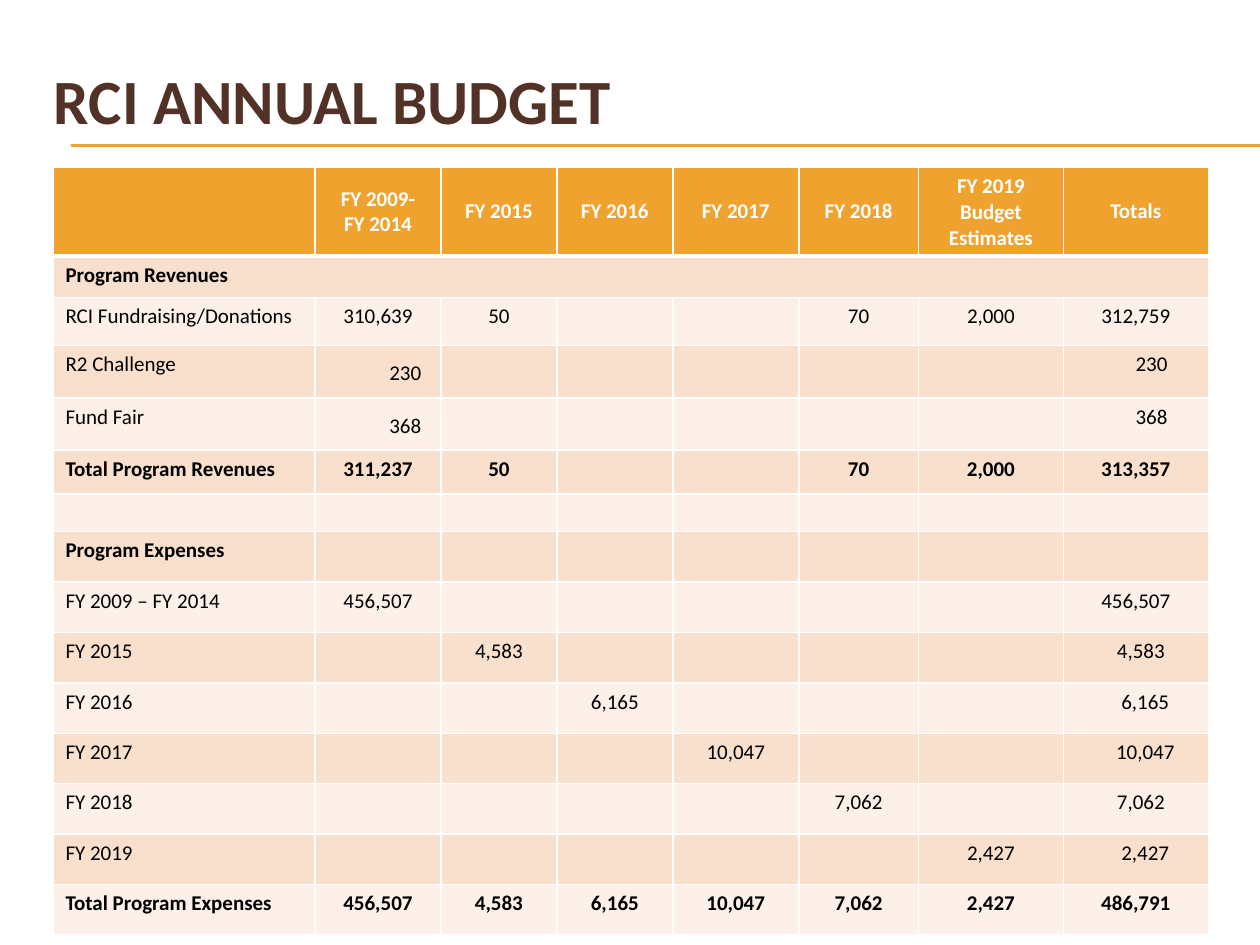
from lxml.etree import SubElement
from pptx import Presentation
from pptx.dml.color import RGBColor
from pptx.enum.shapes import MSO_CONNECTOR as CONN
from pptx.enum.text import MSO_ANCHOR as ANCHOR, PP_ALIGN as ALIGN
from pptx.oxml.ns import qn
from pptx.util import Inches, Pt

ORANGE = RGBColor(0xF0, 0xA2, 0x2E)
BROWN = RGBColor(0x52, 0x32, 0x27)
PEACH = RGBColor(0xF9, 0xE0, 0xCD)
CREAM = RGBColor(0xFC, 0xF0, 0xE8)
WHITE = RGBColor(0xFF, 0xFF, 0xFF)
BLACK = RGBColor(0, 0, 0)
FONT = "Calibri"

# Content: label, six periods, total
TITLE = "RCI ANNUAL BUDGET"
BUDGET = [
    ["", "FY 2009-\nFY 2014", "FY 2015", "FY 2016", "FY 2017", "FY 2018",
     "FY 2019 Budget Estimates", "Totals"],
    ["Program Revenues"] + [""] * 7,
    ["RCI Fundraising/Donations", "310,639", "50", "", "", "70", "2,000", "312,759"],
    ["R2 Challenge", "230", "", "", "", "", "", "230"],
    ["Fund Fair", "368", "", "", "", "", "", "368"],
    ["Total Program Revenues", "311,237", "50", "", "", "70", "2,000", "313,357"],
    [""] * 8,
    ["Program Expenses"] + [""] * 7,
    ["FY 2009 – FY 2014", "456,507", "", "", "", "", "", "456,507"],
    ["FY 2015", "", "4,583", "", "", "", "", "4,583"],
    ["FY 2016", "", "", "6,165", "", "", "", "6,165"],
    ["FY 2017", "", "", "", "10,047", "", "", "10,047"],
    ["FY 2018", "", "", "", "", "7,062", "", "7,062"],
    ["FY 2019", "", "", "", "", "", "2,427", "2,427"],
    ["Total Program Expenses", "456,507", "4,583", "6,165", "10,047", "7,062",
     "2,427", "486,791"],
]
COL_WIDTHS = [2.08, 1, 0.92, 0.92, 1, 0.95, 1.15, 1.15]
ROW_HEIGHTS = [0.7, 0.33, 0.38, 0.42, 0.41, 0.35, 0.3] + [0.4] * 8
BOLD_ROWS = {0, 1, 5, 7, 14}
LOW_CELLS = {(3, 1), (4, 1)}  # left-aligned amounts set lower in the cell
# Left margins that push the shorter totals to the right
TOTAL_MARGINS = {3: 0.35, 4: 0.35, 9: 0.18, 10: 0.25, 11: 0.25, 12: 0.18, 13: 0.25}


def write(tf, text, size=12, color=BLACK, bold=False, align=ALIGN.LEFT):
    for i, line in enumerate(text.split("\n")):
        p = tf.paragraphs[0] if i == 0 else tf.add_paragraph()
        p.alignment = align
        if not line:  # keeps an empty cell as low as a filled one
            SubElement(p._p, qn("a:endParaRPr"), sz=str(size * 100))
            continue
        r = p.add_run()
        r.text = line
        r.font.name, r.font.size, r.font.bold = FONT, Pt(size), bold
        r.font.color.rgb = color


def set_borders(cell, bottom=1):
    tc_pr = cell._tc.get_or_add_tcPr()
    sides = [("a:lnL", 1), ("a:lnR", 1), ("a:lnT", 1), ("a:lnB", bottom)]
    for i, (tag, width) in enumerate(sides):
        ln = SubElement(tc_pr, qn(tag), w=str(Pt(width)))
        fill = SubElement(ln, qn("a:solidFill"))
        SubElement(fill, qn("a:srgbClr"), val=str(WHITE))
        tc_pr.insert(i, ln)


prs = Presentation()
prs.slide_width, prs.slide_height = Inches(10), Inches(7.5)
s = prs.slides.add_slide(prs.slide_layouts[6])

# Rule under the title
for y in (1.15, 1.16):
    rule = s.shapes.add_connector(CONN.STRAIGHT, Inches(0.56), Inches(y),
                                  Inches(10), Inches(y))
    rule.line.color.rgb = ORANGE
    rule.line.width = Pt(0.75)
    SubElement(rule._element.spPr, qn("a:effectLst"))

# Title
sp = s.shapes.add_textbox(Inches(0.33), Inches(0.33), Inches(9.5), Inches(0.92))
sp.text_frame.word_wrap = True
sp.text_frame.vertical_anchor = ANCHOR.MIDDLE
write(sp.text_frame, TITLE, size=36, color=BROWN, bold=True)

# Budget table
table = s.shapes.add_table(len(BUDGET), len(COL_WIDTHS), Inches(0.42), Inches(1.33),
                           Inches(sum(COL_WIDTHS)), Inches(sum(ROW_HEIGHTS))).table
for col, width in zip(table.columns, COL_WIDTHS):
    col.width = Inches(width)
for row, height in zip(table.rows, ROW_HEIGHTS):
    row.height = Inches(height)

for i, values in enumerate(BUDGET):
    header = i == 0
    for j, value in enumerate(values):
        cell = table.cell(i, j)
        low = (i, j) in LOW_CELLS
        cell.fill.solid()
        cell.fill.fore_color.rgb = ORANGE if header else PEACH if i % 2 else CREAM
        set_borders(cell, bottom=3 if header else 1)
        cell.vertical_anchor = ANCHOR.MIDDLE if header else ANCHOR.TOP
        if low:
            cell.margin_left, cell.margin_top = Inches(0.59), Inches(0.12)
        elif j == 7 and i in TOTAL_MARGINS:
            cell.margin_left = Inches(TOTAL_MARGINS[i])
        write(cell.text_frame, value, color=WHITE if header else BLACK,
              bold=i in BOLD_ROWS,
              align=ALIGN.LEFT if low or j == 0 else ALIGN.CENTER)
table.cell(1, 0).merge(table.cell(1, 7))

prs.save("out.pptx")
